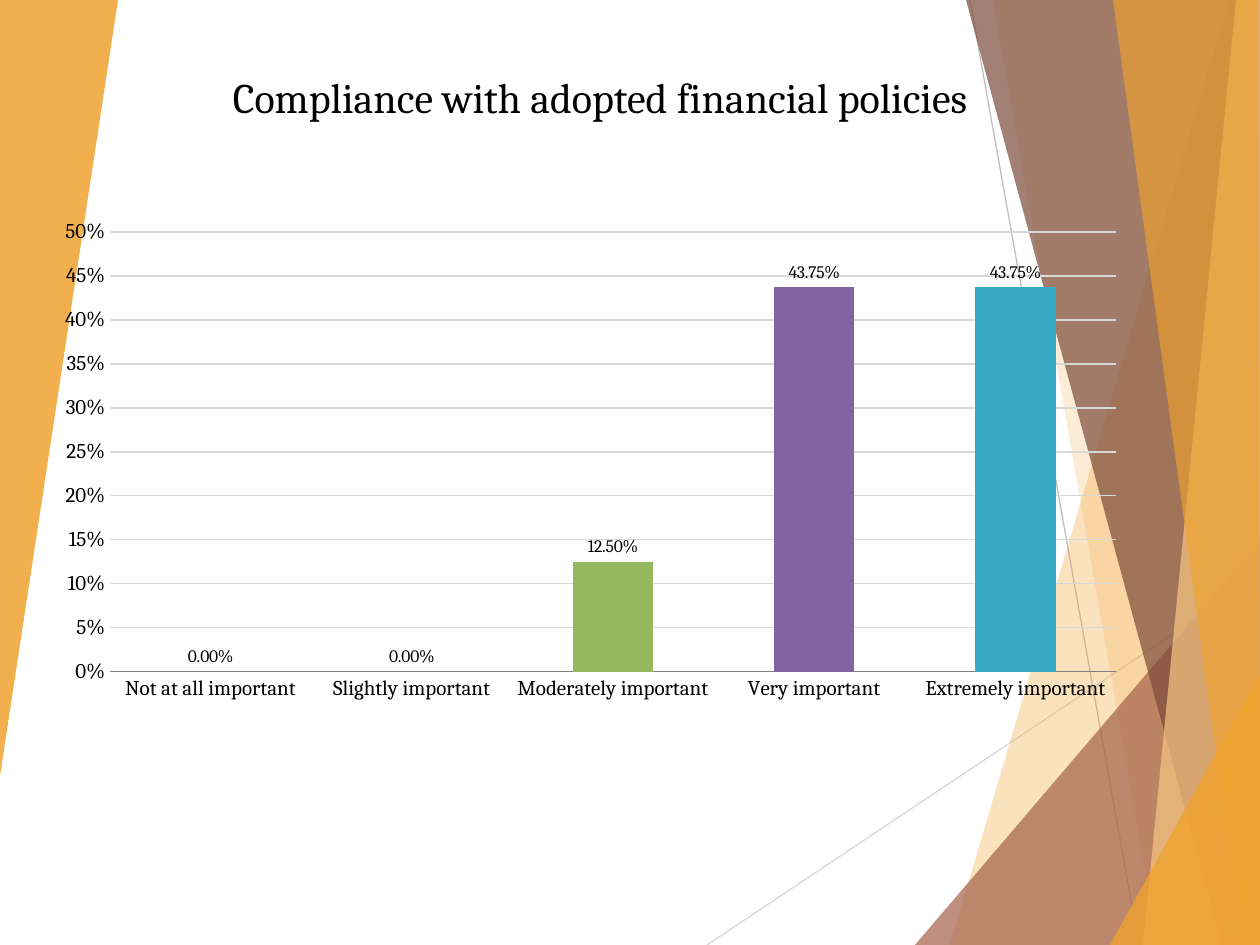
import pptx
import pptx.chart.data
import pptx.dml.color
import pptx.enum.chart
import pptx.enum.shapes
import pptx.enum.text
import pptx.oxml.ns
import pptx.oxml.xmlchemy
import pptx.util

PX = 914400 / 126
WIDTH, HEIGHT = 1260, 945
FONT = "Cambria"
COLORS = {
    "black": "000000", "amber": "F0A22E", "sand": "F6C782", "rust": "A5644E",
    "brown": "7C4B3B", "pale": "D9D9D9", "silver": "BFBFBF", "grid": "D8D8D8",
    "axis": "808080", "blue": "4980BA", "red": "C6514E", "green": "96B95D",
    "purple": "81649F", "teal": "38ABC4",
}

# Facets: points in px, colour, opacity in percent
RIGHT_FACETS = [
    ([(1229, 0), (950, 945), (1260, 945), (1260, 0)], "amber", 30),
    ([(993, 0), (1158, 945), (1260, 945), (1260, 0)], "amber", 20),
    ([(915, 945), (1260, 541), (1260, 945)], "rust", 72),
    ([(966, 0), (1222, 945), (1260, 945), (1260, 0)], "brown", 70),
    ([(1236, 0), (1143, 945), (1260, 945), (1260, 0)], "sand", 70),
    ([(1113, 0), (1242, 945), (1260, 945), (1258, 0)], "amber", 65),
    ([(1110, 945), (1260, 674), (1260, 945)], "amber", 80),
]
LEFT_FACET = ([(0, 0), (118, 0), (0, 776)], "amber", 85)
THIN_LINES = [((707, 945), (1260, 576), "pale"), ((970, 0), (1139, 945), "silver")]

BARS = [
    ("Not at all important", 0, "blue"),
    ("Slightly important", 0, "red"),
    ("Moderately important", 0.125, "green"),
    ("Very important", 0.4375, "purple"),
    ("Extremely important", 0.4375, "teal"),
]


def px(length):
    return pptx.util.Emu(round(length * PX))


def rgb(name):
    return pptx.dml.color.RGBColor.from_string(COLORS[name])


def apply(target, values):
    for name, value in values.items():
        setattr(target, name, value)


def set_font(font, size):
    apply(font, {"name": FONT, "size": pptx.util.Pt(size), "bold": False})
    font.color.rgb = rgb("black")


def set_line(line, color):
    line.color.rgb = rgb(color)
    line.width = pptx.util.Pt(0.75)


def add_child(parent, tag, **attributes):
    child = pptx.oxml.xmlchemy.OxmlElement(tag)
    for name, value in attributes.items():
        child.set(name, str(value))
    parent.append(child)
    return child


def add_facet(slide, left, top, points, color, opacity):
    placed = [(left + x, top + y) for x, y in points]
    builder = slide.shapes.build_freeform(*placed[0], scale=PX)
    builder.add_line_segments(placed[1:], close=True)
    shape = builder.convert_to_shape()
    shape.shadow.inherit = False
    shape.fill.solid()
    shape.fill.fore_color.rgb = rgb(color)
    shape.line.fill.background()
    solid = shape._element.spPr.find(pptx.oxml.ns.qn("a:solidFill"))
    add_child(solid[0], "a:alpha", val=opacity * 1000)


def add_background(slide, left, top):
    for start, end, color in THIN_LINES:
        connector = slide.shapes.add_connector(
            pptx.enum.shapes.MSO_CONNECTOR.STRAIGHT,
            px(left + start[0]), px(top + start[1]),
            px(left + end[0]), px(top + end[1]))
        set_line(connector.line, color)
        add_child(connector._element.spPr, "a:effectLst")
    for facet in RIGHT_FACETS + [LEFT_FACET]:
        add_facet(slide, left, top, *facet)


def add_title(slide, left, top, width, height):
    title = slide.shapes.title
    apply(title, {"left": px(left), "top": px(top),
                  "width": px(width), "height": px(height)})
    frame = title.text_frame
    frame.text = "Compliance with adopted financial policies"
    apply(frame, {"word_wrap": True,
                  "auto_size": pptx.enum.text.MSO_AUTO_SIZE.NONE,
                  "vertical_anchor": pptx.enum.text.MSO_ANCHOR.MIDDLE})
    paragraph = frame.paragraphs[0]
    paragraph.alignment = pptx.enum.text.PP_ALIGN.CENTER
    set_font(paragraph.runs[0].font, 24)
    # Bring the title in front of the background
    slide.shapes._spTree.append(title._element)


def format_axes(chart):
    no_tick = pptx.enum.chart.XL_TICK_MARK.NONE
    for axis in (chart.category_axis, chart.value_axis):
        apply(axis, {"major_tick_mark": no_tick, "minor_tick_mark": no_tick})
        set_font(axis.tick_labels.font, 12)
    set_line(chart.category_axis.format.line, "axis")
    value_axis = chart.value_axis
    apply(value_axis, {"minimum_scale": 0, "maximum_scale": 0.5,
                       "major_unit": 0.05, "has_major_gridlines": True})
    set_line(value_axis.major_gridlines.format.line, "grid")
    value_axis.format.line.fill.background()
    apply(value_axis.tick_labels,
          {"number_format": "0%", "number_format_is_linked": False})


def set_plot_box(chart, x, y, w, h):
    """Fix the inner plot area as fractions of the chart."""
    plot_area = chart._chartSpace.chart.plotArea
    for old in plot_area.findall(pptx.oxml.ns.qn("c:layout")):
        plot_area.remove(old)
    layout = pptx.oxml.xmlchemy.OxmlElement("c:layout")
    plot_area.insert(0, layout)
    manual = add_child(layout, "c:manualLayout")
    add_child(manual, "c:layoutTarget", val="inner")
    for name in "xy":
        add_child(manual, f"c:{name}Mode", val="edge")
    for name, value in {"x": x, "y": y, "w": w, "h": h}.items():
        add_child(manual, f"c:{name}", val=value)


def add_bar_chart(slide, left, top, width, height):
    categories, values, bar_colors = zip(*BARS)
    data = pptx.chart.data.CategoryChartData(number_format="0.00%")
    data.categories = categories
    data.add_series("Series 1", values)
    chart = slide.shapes.add_chart(
        pptx.enum.chart.XL_CHART_TYPE.COLUMN_CLUSTERED,
        px(left), px(top), px(width), px(height), data).chart
    apply(chart, {"has_legend": False, "has_title": False})
    set_font(chart.font, 18)
    format_axes(chart)
    set_plot_box(chart, 66 / width, 22 / height, 1006 / width, 440 / height)

    plot = chart.plots[0]
    apply(plot, {"gap_width": 150, "vary_by_categories": False,
                 "has_data_labels": True})
    apply(plot.data_labels, {
        "show_value": True, "number_format": "0.00%",
        "number_format_is_linked": False,
        "position": pptx.enum.chart.XL_LABEL_POSITION.OUTSIDE_END})
    set_font(plot.data_labels.font, 10)
    for index, color in enumerate(bar_colors):
        fill = plot.series[0].points[index].format.fill
        fill.solid()
        fill.fore_color.rgb = rgb(color)


def main():
    presentation = pptx.Presentation()
    apply(presentation, {"slide_width": px(WIDTH), "slide_height": px(HEIGHT)})
    slide = presentation.slides.add_slide(presentation.slide_layouts[5])
    add_background(slide, 0, 0)
    add_title(slide, 53, 9, 1094, 175)
    add_bar_chart(slide, 44, 210, 1094, 525)
    presentation.save("out.pptx")


if __name__ == "__main__":
    main()
